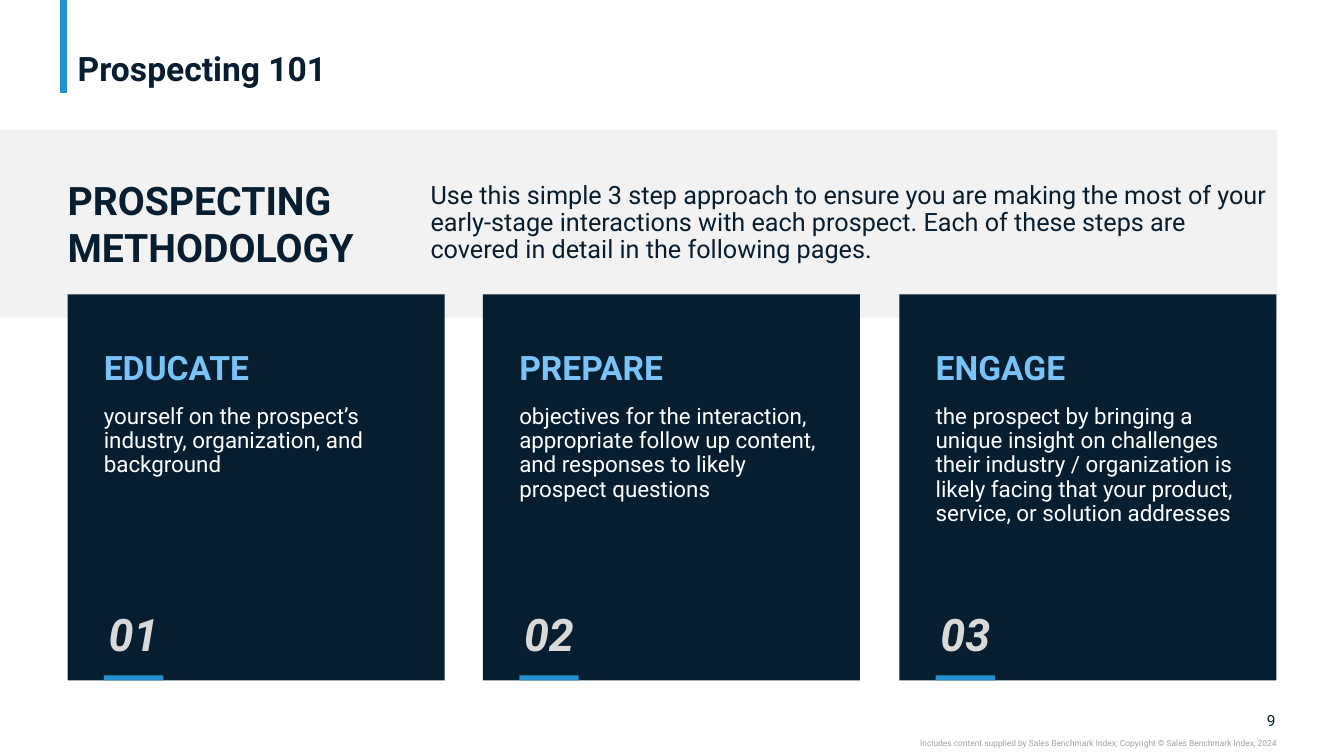
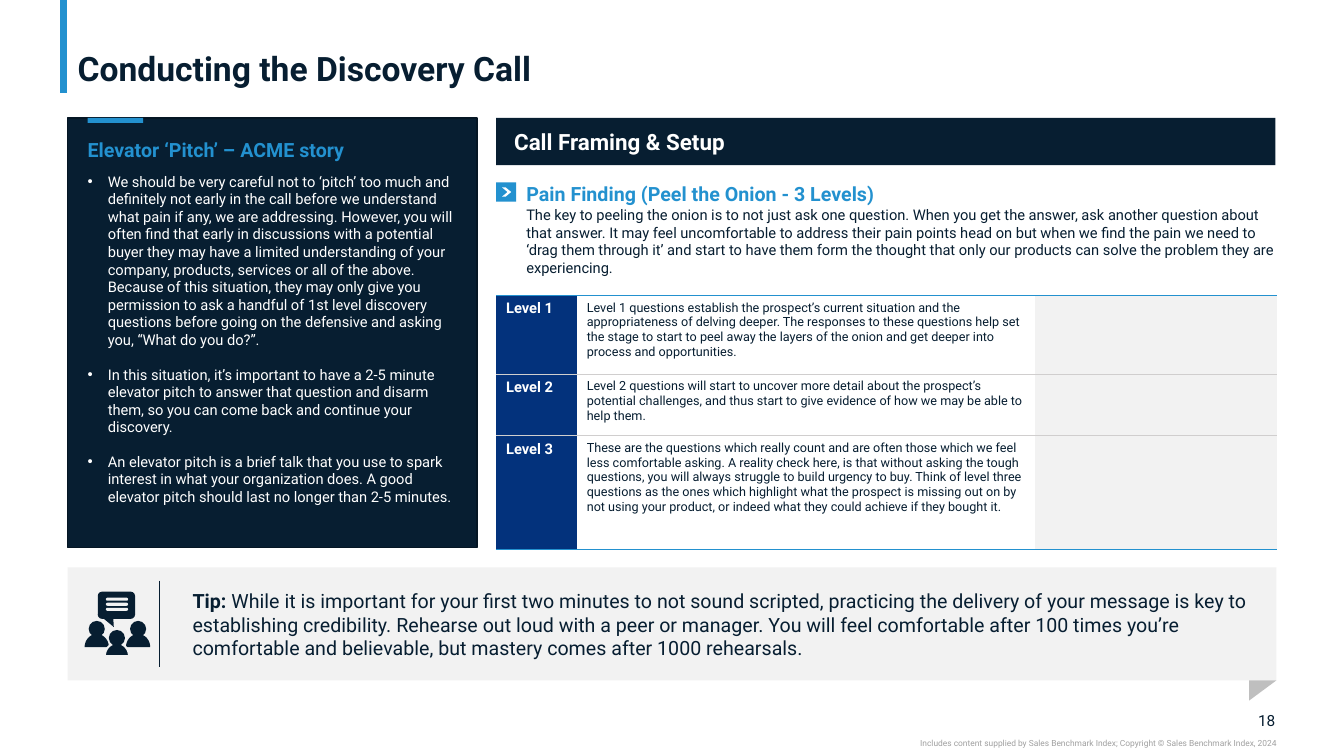
from math import cos, pi, sin

from lxml.etree import SubElement
from pptx import Presentation
from pptx.dml.color import RGBColor
from pptx.enum.shapes import MSO_CONNECTOR, MSO_SHAPE
from pptx.enum.text import MSO_ANCHOR, PP_ALIGN
from pptx.oxml.ns import qn
from pptx.util import Emu, Pt

EMU_PER_PX = 9144
FONT = "Roboto"
NO_STYLE_TABLE = "{2D5ABB26-0587-4C30-8999-92F81FD0307C}"
COLORS = {
    "navy": "071E31",
    "navy_edge": "051624",
    "royal": "03327C",
    "blue": "2391CF",
    "sky": "7AC3F8",
    "white": "FFFFFF",
    "light": "F2F2F2",
    "number": "D9D9D9",
    "rule": "D0CECE",
    "fold": "BFBFBF",
    "footer": "A0A0A0",
}
FOOTER = ("Includes content supplied by Sales Benchmark Index; "
          "Copyright © Sales Benchmark Index, 2024")


def px(value):
    return Emu(round(value * EMU_PER_PX))


def rgb(name):
    return RGBColor.from_string(COLORS[name])


class Deck:
    def __init__(self):
        self.presentation = Presentation()
        self.presentation.slide_width = px(1333)
        self.presentation.slide_height = px(750)
        self.slide = None

    def new_slide(self, title, number):
        layout = self.presentation.slide_layouts[6]
        self.slide = self.presentation.slides.add_slide(layout)
        self.line(63, 0, 63, 92, "blue", 5)
        self.text((77, 4, 1179, 84), title, 24, bold=True, spacing=0.9,
                  anchor=MSO_ANCHOR.BOTTOM)
        self.text((1232, 705, 33, 19), str(number), 11,
                  align=PP_ALIGN.RIGHT, anchor=MSO_ANCHOR.MIDDLE)
        self.text((750, 732, 516, 10), FOOTER, 6, "footer", align=PP_ALIGN.RIGHT)

    def finish(self, shape, fill, edge=None, edge_width=1):
        shape.shadow.inherit = False
        shape.fill.solid()
        shape.fill.fore_color.rgb = rgb(fill)
        if edge:
            shape.line.color.rgb = rgb(edge)
            shape.line.width = Pt(edge_width)
        else:
            shape.line.fill.background()

    def shape(self, box, fill, kind=MSO_SHAPE.RECTANGLE, adjustments=(), edge=None):
        shape = self.slide.shapes.add_shape(kind, *map(px, box))
        for index, value in enumerate(adjustments):
            shape.adjustments[index] = value
        self.finish(shape, fill, edge)

    def outline(self, points, fill, edge=None, edge_width=1):
        first, *rest = [(px(x), px(y)) for x, y in points]
        builder = self.slide.shapes.build_freeform(*first)
        builder.add_line_segments(rest)
        self.finish(builder.convert_to_shape(), fill, edge, edge_width)

    def line(self, x1, y1, x2, y2, color, width):
        connector = self.slide.shapes.add_connector(
            MSO_CONNECTOR.STRAIGHT, px(x1), px(y1), px(x2), px(y2))
        connector.line.color.rgb = rgb(color)
        connector.line.width = Pt(width)
        SubElement(connector._element.spPr, qn("a:effectLst"))

    def frame(self, box, anchor=MSO_ANCHOR.TOP):
        frame = self.slide.shapes.add_textbox(*map(px, box)).text_frame
        frame.word_wrap = True
        frame.margin_left = frame.margin_right = 0
        frame.margin_top = frame.margin_bottom = 0
        frame.vertical_anchor = anchor
        return frame

    def set_text(self, paragraph, content, size, color="navy", bold=False,
                 italic=False, align=PP_ALIGN.LEFT, spacing=None, lead=""):
        if lead:
            run = paragraph.add_run()
            run.text = lead
            run.font.bold = True
        paragraph.add_run().text = content
        paragraph.alignment = align
        if spacing:
            paragraph.line_spacing = spacing
        font = paragraph.font
        font.name = FONT
        font.size = Pt(size)
        font.bold = bold
        font.italic = italic
        font.color.rgb = rgb(color)

    def text(self, box, content, size, color="navy", anchor=MSO_ANCHOR.TOP, **style):
        frame = self.frame(box, anchor)
        self.set_text(frame.paragraphs[0], content, size, color, **style)
        return frame

    def bullets(self, box, items, size, color, gap, indent=20):
        frame = self.frame(box)
        for index, item in enumerate(items):
            paragraph = frame.add_paragraph() if index else frame.paragraphs[0]
            properties = paragraph._p.get_or_add_pPr()
            properties.set("marL", str(px(indent)))
            properties.set("indent", str(-px(indent)))
            SubElement(properties, qn("a:buFont")).set("typeface", "Arial")
            SubElement(properties, qn("a:buChar")).set("char", "•")
            self.set_text(paragraph, item, size, color)
            if index:
                paragraph.space_before = Pt(gap)

    def border(self, cell, side, color):
        properties = cell._tc.get_or_add_tcPr()
        line = SubElement(properties, qn(f"a:{side}"))
        line.set("w", str(Pt(0.5)))
        fill = SubElement(line, qn("a:solidFill"))
        SubElement(fill, qn("a:srgbClr")).set("val", COLORS[color])
        properties.insert(0, line)

    def level_table(self, left, top, widths, heights, rows):
        table = self.slide.shapes.add_table(
            len(heights), len(widths), px(left), px(top),
            px(sum(widths)), px(sum(heights))).table
        table.first_row = table.horz_banding = False
        table._tbl.tblPr.find(qn("a:tableStyleId")).text = NO_STYLE_TABLE
        for column, width in zip(table.columns, widths):
            column.width = px(width)
        for row, height in zip(table.rows, heights):
            row.height = px(height)
        last = len(rows) - 1
        for index, (label, detail) in enumerate(rows):
            label_cell, detail_cell, answer_cell = table.rows[index].cells
            for cell, fill in ((label_cell, "royal"), (answer_cell, "light")):
                cell.fill.solid()
                cell.fill.fore_color.rgb = rgb(fill)
            detail_cell.fill.background()
            self.set_text(label_cell.text_frame.paragraphs[0], label, 10.5, "white",
                          bold=True)
            self.set_text(detail_cell.text_frame.paragraphs[0], detail, 9)
            for cell in (label_cell, detail_cell, answer_cell):
                self.border(cell, "lnB", "blue" if index == last else "rule")
                self.border(cell, "lnT", "rule" if index else "blue")

    def step_card(self, left, number, heading, detail):
        inner = left + 36
        self.shape((left, 292, 374, 383), "navy")
        self.text((inner, 344, 302, 40), heading, 24, "sky", bold=True)
        self.shape((inner, 670, 59, 5), "blue")
        self.text((inner, 602, 59, 54), f"{number:02d}", 32, "number", bold=True,
                  italic=True, align=PP_ALIGN.CENTER, anchor=MSO_ANCHOR.MIDDLE)
        self.text((inner, 402, 302, 145), detail, 16, "white", spacing=0.9)

    def person(self, left, top, edge=None):
        center, base = left + 12, top + 26
        shoulders = [(center - 12 * cos(pi * step / 24), base - 13 * sin(pi * step / 24))
                     for step in range(25)]
        self.outline(shoulders, "navy", edge, 1.5)
        self.shape((left + 4, top, 16, 16), "navy", MSO_SHAPE.OVAL)

    def audience_icon(self):
        self.person(84, 616)
        self.person(125, 616)
        self.person(104, 625, "light")
        self.shape((97, 587, 37, 27), "navy", MSO_SHAPE.ROUNDED_RECTANGULAR_CALLOUT,
                   (-0.07, 0.8, 0.16))
        for top in (593, 598, 603):
            self.shape((105, top, 22, 3), "light", MSO_SHAPE.ROUNDED_RECTANGLE, (0.5,))


STEPS = [
    ("EDUCATE", "yourself on the prospect’s industry, organization, and background"),
    ("PREPARE", "objectives for the interaction, appropriate follow up content, "
                "and responses to likely prospect questions"),
    ("ENGAGE", "the prospect by bringing a unique insight on challenges their industry / "
               "organization is likely facing that your product, service, or solution "
               "addresses"),
]
PITCH_NOTES = [
    "We should be very careful not to ‘pitch’ too much and definitely not early in the call "
    "before we understand what pain if any, we are addressing. However, you will often find "
    "that early in discussions with a potential buyer they may have a limited understanding "
    "of your company, products, services or all of the above. Because of this situation, "
    "they may only give you permission to ask a handful of 1st level discovery questions "
    "before going on the defensive and asking you, “What do you do?”.",
    "In this situation, it’s important to have a 2-5 minute elevator pitch to answer that "
    "question and disarm them, so you can come back and continue your discovery.",
    "An elevator pitch is a brief talk that you use to spark interest in what your "
    "organization does. A good elevator pitch should last no longer than 2-5 minutes.",
]
LEVELS = [
    ("Level 1", "Level 1 questions establish the prospect’s current situation and the "
                "appropriateness of delving deeper. The responses to these questions help "
                "set the stage to start to peel away the layers of the onion and get deeper "
                "into process and opportunities."),
    ("Level 2", "Level 2 questions will start to uncover more detail about the prospect’s "
                "potential challenges, and thus start to give evidence of how we may be able "
                "to help them."),
    ("Level 3", "These are the questions which really count and are often those which we "
                "feel less comfortable asking. A reality check here, is that without asking "
                "the tough questions, you will always struggle to build urgency to buy. "
                "Think of level three questions as the ones which highlight what the "
                "prospect is missing out on by not using your product, or indeed what they "
                "could achieve if they bought it."),
]
PAIN_FINDING = (
    "The key to peeling the onion is to not just ask one question. When you get the answer, "
    "ask another question about that answer. It may feel uncomfortable to address their pain "
    "points head on but when we find the pain we need to ‘drag them through it’ and start to "
    "have them form the thought that only our products can solve the problem they are "
    "experiencing.")
TIP = (
    "While it is important for your first two minutes to not sound scripted, practicing the "
    "delivery of your message is key to establishing credibility. Rehearse out loud with a "
    "peer or manager. You will feel comfortable after 100 times you’re comfortable and "
    "believable, but mastery comes after 1000 rehearsals.")


def add_methodology(deck):
    deck.new_slide("Prospecting 101", 9)
    deck.shape((0, 129, 1267, 186), "light")
    deck.text((67, 175, 327, 94), "PROSPECTING METHODOLOGY", 28, bold=True)
    deck.text((427, 181, 839, 82),
              "Use this simple 3 step approach to ensure you are making the most of your "
              "early-stage interactions with each prospect. Each of these steps are covered "
              "in detail in the following pages.", 18, spacing=0.9)
    for index, (heading, detail) in enumerate(STEPS):
        deck.step_card(67 + index * 825 // 2, index + 1, heading, detail)


def add_discovery_call(deck):
    deck.new_slide("Conducting the Discovery Call", 18)

    deck.shape((67, 117, 406, 426), "navy", edge="navy_edge")
    deck.shape((87, 117, 55, 5), "blue")
    deck.text((87, 137, 366, 24), "Elevator ‘Pitch’ – ACME story", 14, "blue", bold=True)
    deck.bullets((87, 171, 366, 352), PITCH_NOTES, 10.5, "white", 12)

    deck.shape((492, 117, 773, 47), "navy")
    deck.text((510, 128, 506, 25), "Call Framing & Setup", 16, "white", bold=True,
              anchor=MSO_ANCHOR.MIDDLE)
    deck.shape((492, 181, 20, 19), "blue")
    deck.shape((498, 186, 9, 9), "white", MSO_SHAPE.CHEVRON, (0.6,))
    frame = deck.text((522, 181, 745, 94), "Pain Finding (Peel the Onion - 3 Levels)",
                      14, "blue", bold=True)
    deck.set_text(frame.add_paragraph(), PAIN_FINDING, 10.5)
    deck.level_table(492, 293, (80, 455, 240), (78, 61, 113), LEVELS)

    deck.shape((67, 563, 1199, 112), "light")
    deck.outline([(1239, 675), (1266, 675), (1239, 695)], "fold")
    deck.audience_icon()
    deck.line(158, 576, 158, 662, "navy", 0.5)
    deck.text((191, 584, 1048, 71), TIP, 14, anchor=MSO_ANCHOR.MIDDLE, lead="Tip: ")


def main():
    deck = Deck()
    add_methodology(deck)
    add_discovery_call(deck)
    deck.presentation.save("out.pptx")


if __name__ == "__main__":
    main()
